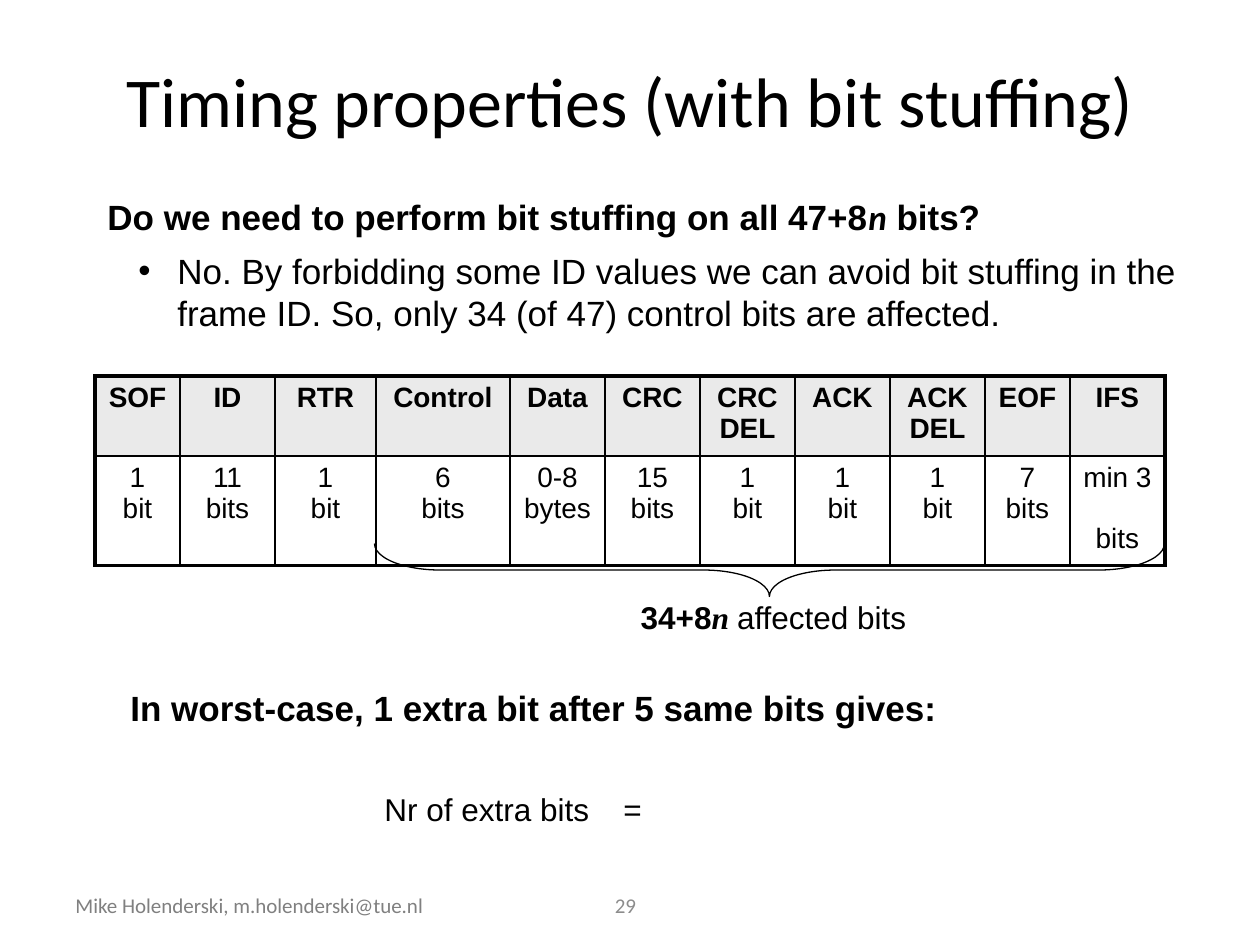
import pptx
import pptx.util
import pptx.dml.color
import pptx.enum.shapes
import pptx.enum.text
import pptx.oxml
import pptx.oxml.ns

SCALE = 914400 / 126
COLORS = {"ink": "000000", "footer": "808080", "number": "8C8C8C",
          "header": "EAEAEA", "paper": "FFFFFF"}
ALIGN = pptx.enum.text.PP_ALIGN
ANCHOR = pptx.enum.text.MSO_ANCHOR

BODY = {"name": "Arial", "size": 20}
STRONG = {**BODY, "bold": True}
NOTE = {"name": "Arial", "size": 18}
CELL = {"name": "Arial", "size": 16}
SMALL = {"name": "Calibri", "size": 12}

FIELDS = [
    ("SOF", "1\vbit", 85), ("ID", "11 bits", 95), ("RTR", "1\vbit", 101),
    ("Control", "6\vbits", 134), ("Data", "0-8 bytes", 95),
    ("CRC", "15 bits", 95), ("CRC DEL", "1\vbit", 95),
    ("ACK", "1\vbit", 95), ("ACK DEL", "1\vbit", 95),
    ("EOF", "7 bits", 85), ("IFS", "min 3\nbits", 95),
]
ROWS = [80, 106]


def px(n):
    return pptx.util.Emu(round(n * SCALE))


def rgb(key):
    return pptx.dml.color.RGBColor.from_string(COLORS[key])


def element(xml):
    ns = pptx.oxml.ns.nsdecls("a")
    return pptx.oxml.parse_xml(xml.replace(" ", f" {ns} ", 1))


def style_run(r, fmt, color="ink"):
    for key, value in fmt.items():
        setattr(r.font, key, pptx.util.Pt(value) if key == "size" else value)
    r.font.color.rgb = rgb(color)


def add_text(s, box, runs, align=ALIGN.LEFT, anchor=ANCHOR.TOP, color="ink"):
    sp = s.shapes.add_textbox(*map(px, box))
    tf = sp.text_frame
    tf.word_wrap = True
    tf.vertical_anchor = anchor
    p = tf.paragraphs[0]
    p.alignment = align
    for text, fmt in runs:
        r = p.add_run()
        r.text = text
        style_run(r, fmt, color)
    return p


def add_bullet(p, margin, hang):
    pPr = p._p.get_or_add_pPr()
    pPr.set("marL", str(px(margin)))
    pPr.set("indent", str(-px(hang)))
    pPr.append(element('<a:buFont typeface="Arial"/>'))
    pPr.append(element('<a:buChar char="•"/>'))


def add_tab(p, pos):
    pPr = p._p.get_or_add_pPr()
    pPr.append(element(
        f'<a:tabLst ><a:tab pos="{px(pos)}" algn="l"/></a:tabLst>'))


def set_borders(cell, widths):
    tcPr = cell._tc.get_or_add_tcPr()
    for i, (side, width) in enumerate(zip("LRTB", widths)):
        tcPr.insert(i, element(
            f'<a:ln{side} w="{pptx.util.Pt(width)}"><a:solidFill>'
            f'<a:srgbClr val="{COLORS["ink"]}"/></a:solidFill></a:ln{side}>'))


def fill_cell(cell, text, header):
    cell.fill.solid()
    cell.fill.fore_color.rgb = rgb("header" if header else "paper")
    tf = cell.text_frame
    tf.text = text
    for i, p in enumerate(tf.paragraphs):
        p.alignment = ALIGN.CENTER
        if i:
            p.space_before = pptx.util.Pt(17)
        for r in p.runs:
            style_run(r, {**CELL, "bold": header})


def add_frame_table(s, left, top):
    widths = [field[2] for field in FIELDS]
    frame = s.shapes.add_table(len(ROWS), len(FIELDS), px(left), px(top),
                               px(sum(widths)), px(sum(ROWS)))
    table = frame.table
    table.first_row = table.horz_banding = False
    for column, width in zip(table.columns, widths):
        column.width = px(width)
    last_row, last_col = len(ROWS) - 1, len(FIELDS) - 1
    for i, height in enumerate(ROWS):
        table.rows[i].height = px(height)
        for j, field in enumerate(FIELDS):
            cell = table.cell(i, j)
            fill_cell(cell, field[i], i == 0)
            outer = (j == 0, j == last_col, i == 0, i == last_row)
            set_borders(cell, [2.25 if edge else 1 for edge in outer])


def add_brace(s, box):
    sp = s.shapes.add_shape(
        pptx.enum.shapes.MSO_SHAPE.LEFT_BRACE, *map(px, box))
    sp.rotation = 270
    sp.adjustments[0] = 1.24
    sp.adjustments[1] = 0.5
    sp.shadow.inherit = False
    sp.fill.background()
    sp.line.color.rgb = rgb("ink")
    sp.line.width = pptx.util.Pt(0.75)


def main():
    prs = pptx.Presentation()
    prs.slide_width, prs.slide_height = px(1260), px(945)
    s = prs.slides.add_slide(prs.slide_layouts[6])

    add_text(s, (63, 38, 1134, 123),
             [("Timing properties (with bit stuffing)",
               {"name": "Calibri", "size": 40})],
             ALIGN.CENTER, ANCHOR.MIDDLE)
    add_text(s, (95, 189, 1116, 52), [
        ("Do we need to perform bit stuffing on all 47+8", STRONG),
        ("n", {**STRONG, "name": "Calibri", "italic": True}),
        (" bits?", STRONG)])
    answer = add_text(s, (63, 243, 1162, 97), [
        ("No. By forbidding some ID values we can avoid bit stuffing in the "
         "frame ID. So, only 34 (of 47) control bits are affected.", BODY)])
    add_bullet(answer, 102, 39)

    add_frame_table(s, 95, 376)
    add_brace(s, (743, 175, 53, 790))
    add_text(s, (609, 592, 329, 50), [
        ("34+8", {**NOTE, "bold": True}),
        ("n ", {"name": "Times New Roman", "size": 18,
                "bold": True, "italic": True}),
        ("affected bits", NOTE)], ALIGN.CENTER)

    add_text(s, (118, 680, 1071, 73),
             [("In worst-case, 1 extra bit after 5 same bits gives:", STRONG)])
    formula = add_text(s, (372, 784, 320, 50),
                       [("Nr of extra bits\t=", NOTE)])
    add_tab(formula, 239)

    add_text(s, (63, 886, 494, 38),
             [("Mike Holenderski, m.holenderski@tue.nl", SMALL)],
             color="footer")
    add_text(s, (557, 886, 137, 38), [("29", SMALL)],
             ALIGN.CENTER, ANCHOR.MIDDLE, "number")
    prs.save("out.pptx")


if __name__ == "__main__":
    main()
